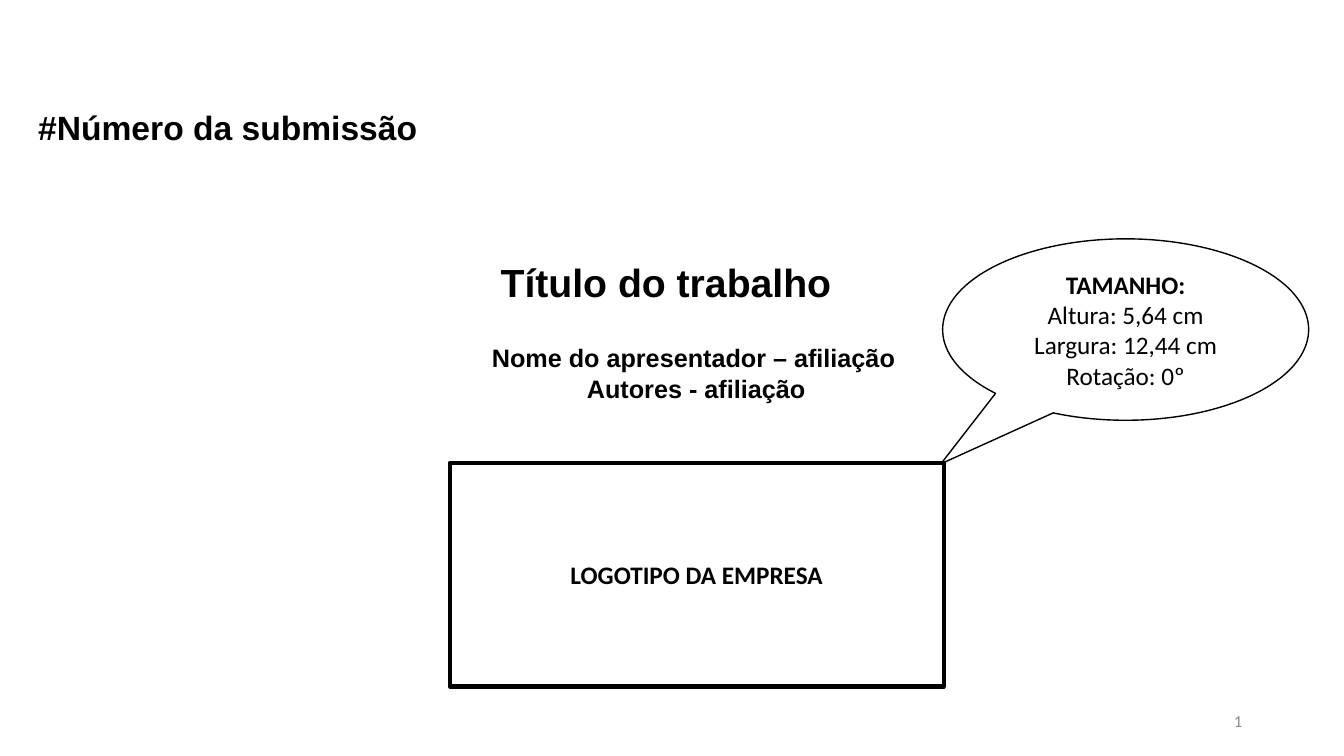
from pptx import Presentation
from pptx.dml.color import RGBColor
from pptx.enum.shapes import MSO_SHAPE as Shape
from pptx.enum.text import MSO_ANCHOR as Anchor, PP_ALIGN as Align
from pptx.util import Pt

PX = 9144  # 100 px to the inch
COLORS = {"ink": "000000", "muted": "8C8C8C"}


def write(shape, lines, size, font="Calibri", color="ink", anchor=Anchor.MIDDLE):
    """Fill a shape with lines given as (text, alignment, bold)."""
    frame = shape.text_frame
    frame.word_wrap = True
    frame.vertical_anchor = anchor
    for index, (text, align, bold) in enumerate(lines):
        para = frame.add_paragraph() if index else frame.paragraphs[0]
        para.text = text
        para.alignment = align
        para.font.name = font
        para.font.size = Pt(size)
        para.font.bold = bold
        para.font.color.rgb = RGBColor.from_string(COLORS[color])


def outline(kind, place, width):
    """Add an unfilled preset shape with a dark line."""
    shape = page.shapes.add_shape(kind, *(n * PX for n in place))
    shape.shadow.inherit = False
    shape.fill.background()
    shape.line.color.rgb = RGBColor.from_string(COLORS["ink"])
    shape.line.width = Pt(width)
    return shape


deck = Presentation()
deck.slide_width, deck.slide_height = 1333 * PX, 750 * PX
page = deck.slides.add_slide(deck.slide_layouts[6])

# Headings
headings = [
    ((418, 251, 485, 57), 28, [("Título do trabalho", Align.CENTER, True)]),
    ((478, 335, 425, 71), 18, [("Nome do apresentador – afiliação", Align.LEFT, True),
                               ("Autores - afiliação", Align.CENTER, True)]),
    ((28, 101, 418, 50), 24, [("#Número da submissão", Align.LEFT, True)]),
]
for place, size, lines in headings:
    box = page.shapes.add_textbox(*(n * PX for n in place))
    write(box, lines, size, font="Arial", anchor=Anchor.TOP)

# Logo area
logo_area = outline(Shape.RECTANGLE, (446, 459, 490, 222), 3)
write(logo_area, [("LOGOTIPO DA EMPRESA", Align.CENTER, True)], 18)

# Size callout pointing at the corner of the logo area
callout = outline(Shape.OVAL_CALLOUT, (935, 237, 363, 180), 1)
callout.adjustments[0] = -0.505
callout.adjustments[1] = 0.74
write(callout, [
    ("TAMANHO:", Align.CENTER, True),
    ("Altura: 5,64 cm", Align.CENTER, False),
    ("Largura: 12,44 cm", Align.CENTER, False),
    ("Rotação: 0º", Align.CENTER, False),
], 18)

# Page number
number = page.shapes.add_textbox(942 * PX, 695 * PX, 300 * PX, 40 * PX)
write(number, [("1", Align.RIGHT, False)], 12, color="muted")

deck.save("out.pptx")
